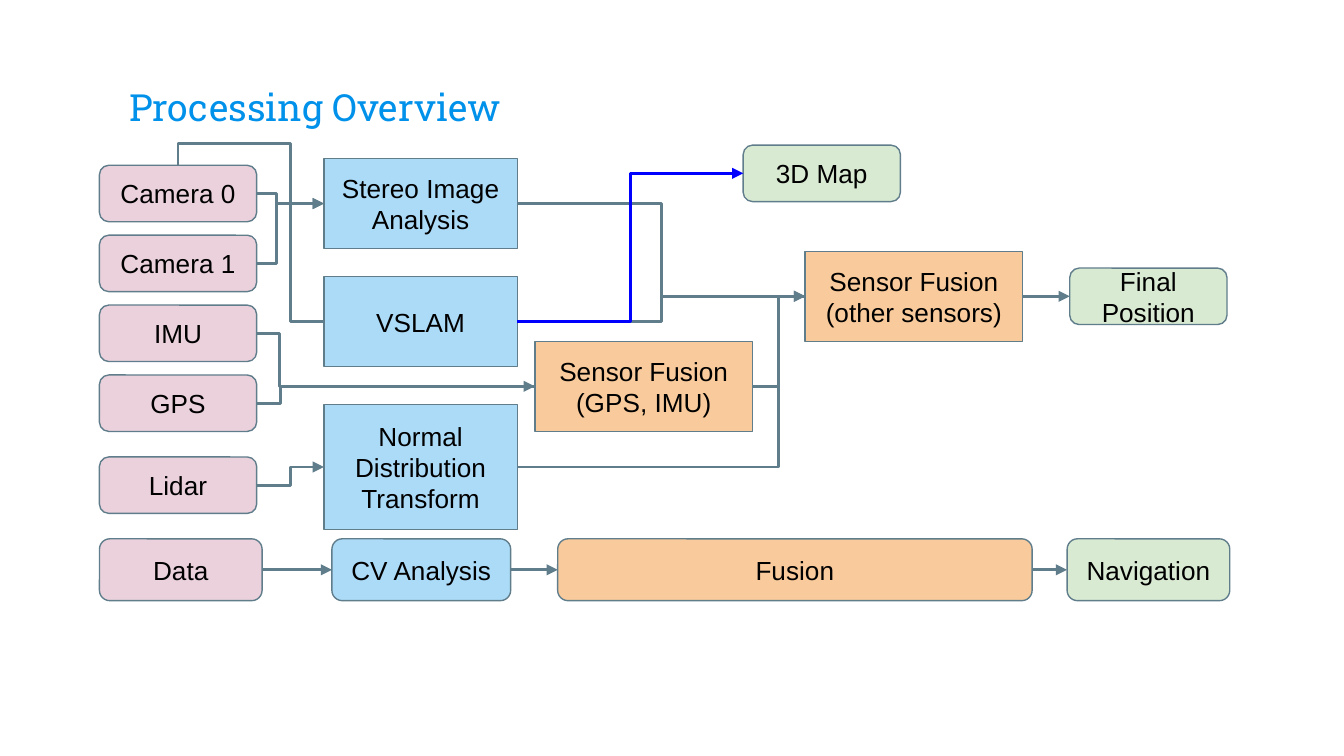
from dataclasses import dataclass
from typing import Optional

from lxml.etree import SubElement
from pptx import Presentation
from pptx.dml.color import RGBColor
from pptx.enum.shapes import MSO_CONNECTOR, MSO_SHAPE
from pptx.enum.text import MSO_ANCHOR, MSO_AUTO_SIZE, PP_ALIGN
from pptx.oxml.ns import qn
from pptx.shapes.autoshape import Shape
from pptx.shapes.connector import Connector
from pptx.slide import Slide
from pptx.util import Emu, Pt

PIXELS_PER_INCH = 200
SCALE = 914400 // PIXELS_PER_INCH


@dataclass(frozen=True)
class Theme:
    title: str = "0091EA"
    text: str = "000000"
    outline: str = "607D8B"
    highlight: str = "0000FF"
    data: str = "EAD1DC"
    analysis: str = "ACDBF8"
    fusion: str = "F9CB9C"
    navigation: str = "D9EAD3"
    title_font: str = "Roboto Slab"
    body_font: str = "Arial"
    title_size: int = 20
    body_size: int = 14
    outline_width: float = 0.75
    connector_width: float = 1.5


THEME = Theme()


@dataclass(frozen=True)
class Box:
    text: str
    left: int
    top: int
    width: int
    height: int
    fill: str
    rounded: bool = True

    @property
    def right(self) -> int:
        return self.left + self.width

    @property
    def middle(self) -> int:
        return self.top + self.height // 2

    @property
    def center(self) -> int:
        return self.left + self.width // 2


@dataclass(frozen=True)
class Elbow:
    source: Box
    target: Box
    turn: int
    arrow: bool = True
    color: str = THEME.outline


def px(value: float) -> Emu:
    return Emu(round(value * SCALE))


def sensor(text: str, top: int) -> Box:
    return Box(text, 148, top, 234, 84, THEME.data)


def analysis(text: str, top: int, height: int = 134) -> Box:
    return Box(text, 482, top, 288, height, THEME.analysis, False)


def fusion(text: str, left: int, top: int) -> Box:
    return Box(text, left, top, 324, 134, THEME.fusion, False)


def result(text: str, left: int, top: int) -> Box:
    return Box(text, left, top, 234, 84, THEME.navigation)


def stage(text: str, left: int, width: int, fill: str) -> Box:
    return Box(text, left, 802, width, 92, fill)


def add_title(slide: Slide, text: str) -> None:
    title = slide.shapes.title
    title.left, title.top, title.width, title.height = px(172), px(58), px(1656), px(154)
    frame = title.text_frame
    frame.text = text
    frame.auto_size = MSO_AUTO_SIZE.NONE
    frame.vertical_anchor = MSO_ANCHOR.BOTTOM
    frame.margin_left = frame.margin_right = frame.margin_top = frame.margin_bottom = px(20)
    paragraph = frame.paragraphs[0]
    paragraph.alignment = PP_ALIGN.LEFT
    paragraph.font.name = THEME.title_font
    paragraph.font.size = Pt(THEME.title_size)
    paragraph.font.color.rgb = RGBColor.from_string(THEME.title)


def add_box(slide: Slide, box: Box) -> Shape:
    kind = MSO_SHAPE.ROUNDED_RECTANGLE if box.rounded else MSO_SHAPE.RECTANGLE
    shape = slide.shapes.add_shape(kind, px(box.left), px(box.top), px(box.width), px(box.height))
    shape.shadow.inherit = False
    shape.fill.solid()
    shape.fill.fore_color.rgb = RGBColor.from_string(box.fill)
    shape.line.color.rgb = RGBColor.from_string(THEME.outline)
    shape.line.width = Pt(THEME.outline_width)
    frame = shape.text_frame
    frame.text = box.text
    frame.word_wrap = True
    frame.vertical_anchor = MSO_ANCHOR.MIDDLE
    frame.margin_left = frame.margin_right = frame.margin_top = frame.margin_bottom = px(20)
    paragraph = frame.paragraphs[0]
    paragraph.alignment = PP_ALIGN.CENTER
    paragraph.font.name = THEME.body_font
    paragraph.font.size = Pt(THEME.body_size)
    paragraph.font.color.rgb = RGBColor.from_string(THEME.text)
    return shape


def style_connector(connector: Connector, color: str, arrow: bool) -> None:
    connector.line.color.rgb = RGBColor.from_string(color)
    connector.line.width = Pt(THEME.connector_width)
    properties = connector._element.spPr
    if arrow:
        SubElement(properties.find(qn("a:ln")), qn("a:tailEnd"), type="triangle")
    SubElement(properties, qn("a:effectLst"))


def set_route(connector: Connector, preset: str, *bends: float) -> None:
    geometry = connector._element.spPr.find(qn("a:prstGeom"))
    geometry.set("prst", preset)
    guides = geometry.find(qn("a:avLst"))
    for number, bend in enumerate(bends, 1):
        SubElement(guides, qn("a:gd"), name=f"adj{number}", fmla=f"val {round(bend * 100000)}")


def add_elbow(slide: Slide, elbow: Elbow) -> None:
    start, end = elbow.source.right, elbow.target.left
    connector = slide.shapes.add_connector(
        MSO_CONNECTOR.ELBOW, px(start), px(elbow.source.middle), px(end), px(elbow.target.middle))
    set_route(connector, "bentConnector3", (elbow.turn - start) / (end - start))
    style_connector(connector, elbow.color, elbow.arrow)


def add_overhead_elbow(slide: Slide, source: Box, target: Box, rise: int, turn: int) -> None:
    across = target.left - source.center
    down = target.middle - source.top
    left = source.center + (across - down) / 2
    top = source.top + (down - across) / 2
    connector = slide.shapes.add_connector(
        MSO_CONNECTOR.ELBOW, px(left), px(top), px(left + down), px(top + across))
    transform = connector._element.spPr.find(qn("a:xfrm"))
    transform.set("rot", str(270 * 60000))
    transform.set("flipH", "1")
    set_route(connector, "bentConnector4", -rise / down, (turn - source.center) / across)
    style_connector(connector, THEME.outline, False)


def add_arrow(slide: Slide, source: Shape, target: Shape) -> None:
    connector = slide.shapes.add_connector(MSO_CONNECTOR.STRAIGHT, 0, 0, 0, 0)
    connector.begin_connect(source, 3)
    connector.end_connect(target, 1)
    style_connector(connector, THEME.outline, True)


def main() -> None:
    presentation = Presentation()
    presentation.slide_width, presentation.slide_height = px(2000), px(1125)
    slide = presentation.slides.add_slide(presentation.slide_layouts[5])
    add_title(slide, "Processing Overview")

    cameras_and_motion = [
        sensor(text, 246 + 104 * row)
        for row, text in enumerate(("Camera 0", "Camera 1", "IMU", "GPS"))]
    camera_0, camera_1, imu, gps = cameras_and_motion
    lidar = sensor("Lidar", 680)
    stereo = analysis("Stereo Image Analysis", 236)
    vslam = analysis("VSLAM", 412)
    transform = analysis("Normal Distribution Transform", 602, 186)
    motion_fusion = fusion("Sensor Fusion (GPS, IMU)", 796, 508)
    full_fusion = fusion("Sensor Fusion (other sensors)", 1198, 374)
    position = result("Final Position", 1592, 399)
    map_3d = result("3D Map", 1106, 216)
    stages = [
        stage("Data", 148, 242, THEME.data),
        stage("CV Analysis", 494, 266, THEME.analysis),
        stage("Fusion", 830, 706, THEME.fusion),
        stage("Navigation", 1588, 242, THEME.navigation)]

    for box in (*cameras_and_motion, lidar, motion_fusion, stereo, vslam, transform, map_3d):
        add_box(slide, box)
    add_arrow(slide, add_box(slide, full_fusion), add_box(slide, position))
    stage_shapes = [add_box(slide, box) for box in stages]
    for source, target in zip(stage_shapes, stage_shapes[1:]):
        add_arrow(slide, source, target)

    add_overhead_elbow(slide, camera_0, vslam, 32, 432)
    for elbow in (
        Elbow(camera_0, stereo, 412),
        Elbow(camera_1, stereo, 412),
        Elbow(imu, motion_fusion, 416, arrow=False),
        Elbow(gps, motion_fusion, 418),
        Elbow(lidar, transform, 432),
        Elbow(motion_fusion, full_fusion, 1158),
        Elbow(stereo, full_fusion, 984, arrow=False),
        Elbow(vslam, full_fusion, 984, arrow=False),
        Elbow(transform, full_fusion, 1158),
        Elbow(vslam, map_3d, 938, color=THEME.highlight),
    ):
        add_elbow(slide, elbow)

    presentation.save("out.pptx")


if __name__ == "__main__":
    main()
